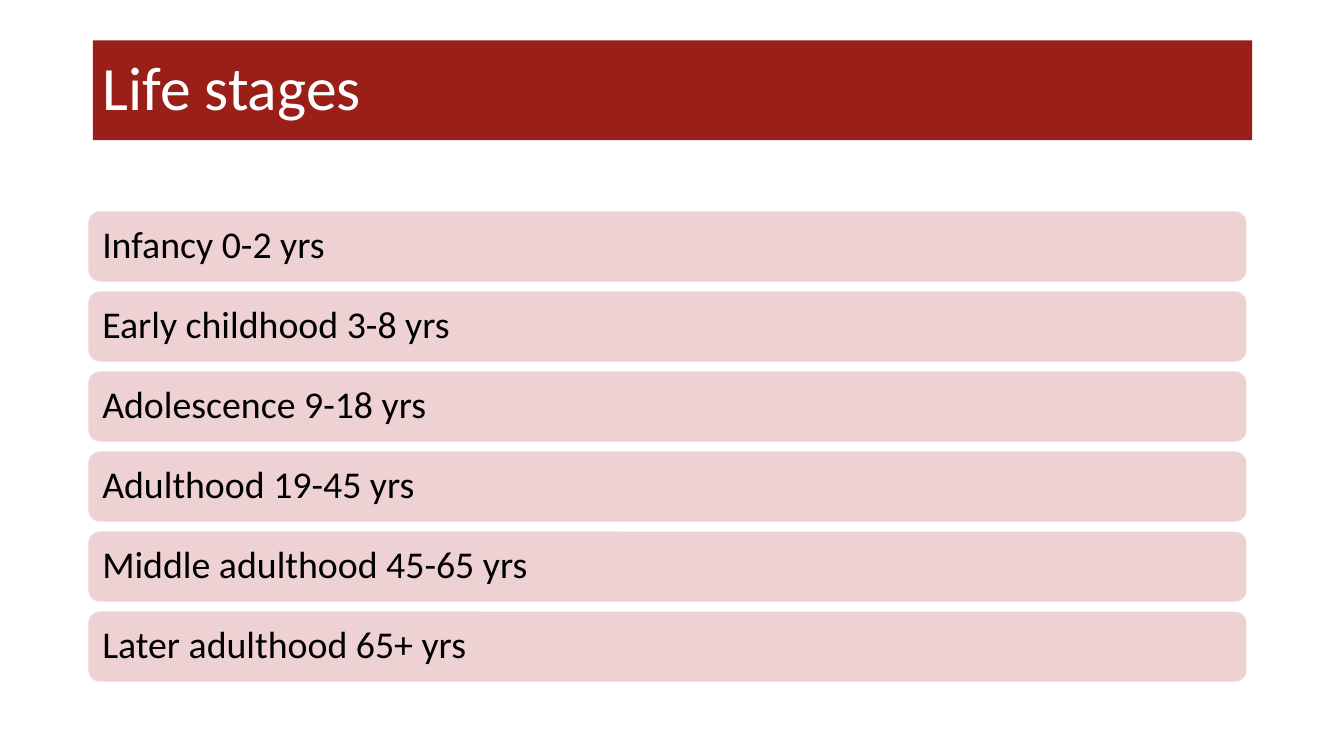
from dataclasses import dataclass

import pptx
import pptx.dml.color
import pptx.enum.shapes
import pptx.enum.text
import pptx.util
from pptx.util import Inches

COLORS = {"title_fill": "9A1F18", "bar_fill": "EED2D3", "white": "FFFFFF", "black": "000000"}
FONT = "Calibri"
BAR_LEFT, BAR_WIDTH, BAR_HEIGHT = 0.87, 11.5, 0.71
FIRST_TOP, LAST_TOP = 2.09, 6.06
BAR_INSET = 0.11


@dataclass(frozen=True)
class LifeStage:
    name: str
    ages: str


LIFE_STAGES = [
    LifeStage("Infancy", "0-2"),
    LifeStage("Early childhood", "3-8"),
    LifeStage("Adolescence", "9-18"),
    LifeStage("Adulthood", "19-45"),
    LifeStage("Middle adulthood", "45-65"),
    LifeStage("Later adulthood", "65+"),
]


def rgb(name: str) -> pptx.dml.color.RGBColor:
    return pptx.dml.color.RGBColor.from_string(COLORS[name])


def fill_solid(shape, color: str) -> None:
    shape.fill.solid()
    shape.fill.fore_color.rgb = rgb(color)


def write_text(shape, text: str, size: float, color: str) -> None:
    """Put one left-aligned, vertically centred line of text in the shape."""
    frame = shape.text_frame
    frame.word_wrap = True
    frame.auto_size = pptx.enum.text.MSO_AUTO_SIZE.NONE
    frame.vertical_anchor = pptx.enum.text.MSO_ANCHOR.MIDDLE
    paragraph = frame.paragraphs[0]
    paragraph.alignment = pptx.enum.text.PP_ALIGN.LEFT
    paragraph.line_spacing = 0.9
    run = paragraph.add_run()
    run.text = text
    run.font.name = FONT
    run.font.size = pptx.util.Pt(size)
    run.font.color.rgb = rgb(color)


def format_title(title, text: str) -> None:
    title.left, title.top = Inches(0.92), Inches(0.4)
    title.width, title.height = Inches(11.5), Inches(0.99)
    fill_solid(title, "title_fill")
    write_text(title, text, 44, "white")


def add_stage_bar(slide, stage: LifeStage, top: float) -> None:
    bar = slide.shapes.add_shape(
        pptx.enum.shapes.MSO_SHAPE.ROUNDED_RECTANGLE,
        Inches(BAR_LEFT), Inches(top), Inches(BAR_WIDTH), Inches(BAR_HEIGHT),
    )
    bar.shadow.inherit = False
    fill_solid(bar, "bar_fill")
    bar.line.color.rgb = rgb("white")
    bar.line.width = pptx.util.Pt(1)
    frame = bar.text_frame
    frame.margin_left = frame.margin_right = Inches(BAR_INSET)
    frame.margin_top = frame.margin_bottom = Inches(BAR_INSET)
    write_text(bar, f"{stage.name} {stage.ages} yrs", 27, "black")


def main() -> None:
    presentation = pptx.Presentation()
    presentation.slide_width = Inches(13.33)
    presentation.slide_height = Inches(7.5)
    slide = presentation.slides.add_slide(presentation.slide_layouts.get_by_name("Title Only"))
    format_title(slide.shapes.title, "Life stages")
    pitch = (LAST_TOP - FIRST_TOP) / (len(LIFE_STAGES) - 1)
    for index, stage in enumerate(LIFE_STAGES):
        add_stage_bar(slide, stage, FIRST_TOP + index * pitch)
    presentation.save("out.pptx")


if __name__ == "__main__":
    main()
